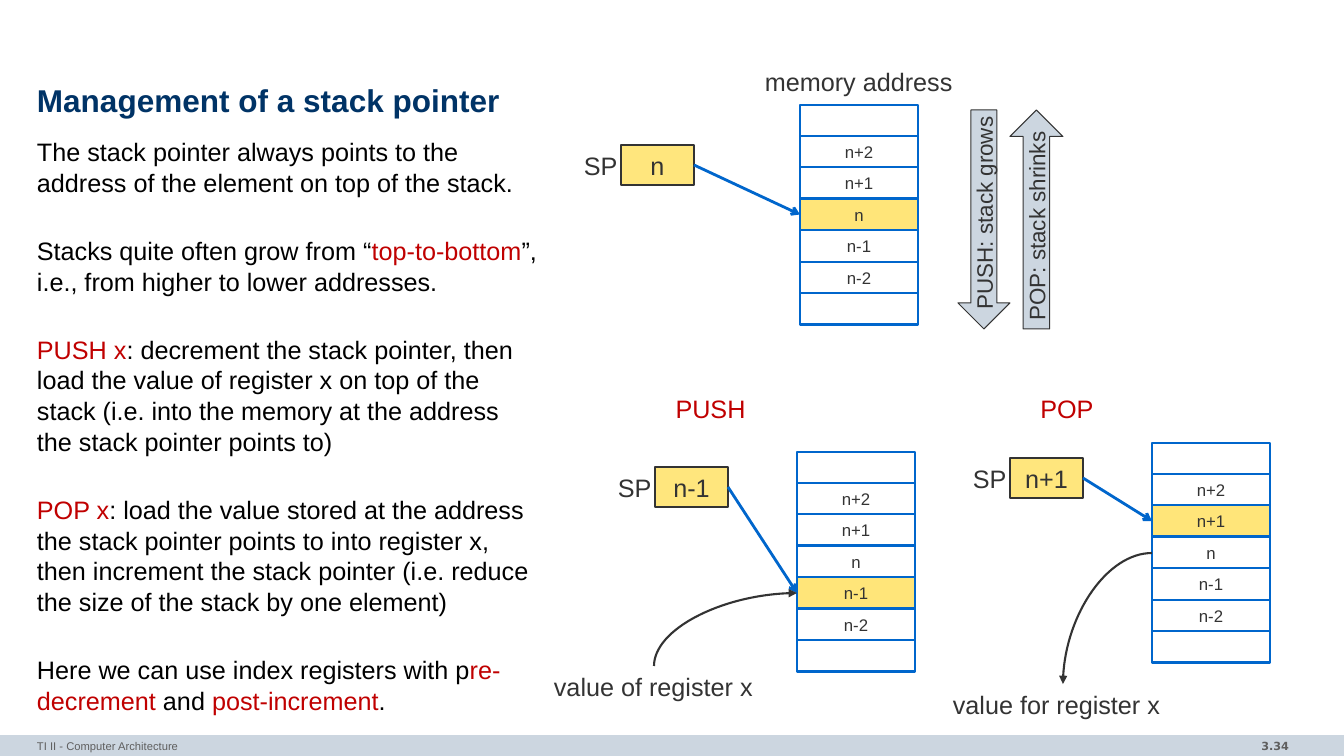
"""Build the slide on managing a stack pointer."""
from lxml import etree
from pptx import Presentation, util as u
from pptx.dml.color import RGBColor
from pptx.enum import shapes, text
from pptx.oxml import ns

NAVY, RED, BLACK, DARK, GRAY = "003366", "C00000", "000000", "333333", "5F5F5F"
BLUE, PALE, YELLOW, GOLD = "0066CC", "CCD6E0", "FFE67D", "FFE579"
LEFT, CENTER, RIGHT = text.PP_ALIGN.LEFT, text.PP_ALIGN.CENTER, text.PP_ALIGN.RIGHT
TOP, MIDDLE = text.MSO_ANCHOR.TOP, text.MSO_ANCHOR.MIDDLE
RECTANGLE = shapes.MSO_SHAPE.RECTANGLE

presentation = Presentation()
presentation.slide_width, presentation.slide_height = u.Inches(13.3333), u.Inches(7.5)
slide = presentation.slides.add_slide(presentation.slide_layouts[6])


def px(*lengths):
    """Turn pixels into EMU."""
    return [u.Emu(round(length * 12192000 / 1344)) for length in lengths]


def add_block(box, paragraphs=(), kind=None, fill=None, line=None, weight=1, frame=None,
              layout=None, font=None, color=DARK):
    """Add a text box, or a shape of the given kind, with its text."""
    if kind is None:
        shape = slide.shapes.add_textbox(*px(*box))
    else:
        shape = slide.shapes.add_shape(kind, *px(*box))
        shape.shadow.inherit = False
        if fill:
            shape.fill.solid()
            shape.fill.fore_color.rgb = RGBColor.from_string(fill)
        else:
            shape.fill.background()
        if line:
            shape.line.color.rgb = RGBColor.from_string(line)
            shape.line.width = u.Pt(weight)
        else:
            shape.line.fill.background()
    for name, value in {"word_wrap": False, **(frame or {})}.items():
        setattr(shape.text_frame, name, value)
    for index, runs in enumerate(paragraphs):
        paragraph = shape.text_frame.paragraphs[0] if index == 0 else shape.text_frame.add_paragraph()
        for name, value in (layout or {}).items():
            if index or name != "space_before":
                setattr(paragraph, name, value)
        for words, run_color in runs:
            run = paragraph.add_run()
            run.text = words
            for name, value in {"name": "Arial", "size": u.Pt(18), **(font or {})}.items():
                setattr(run.font, name, value)
            run.font.color.rgb = RGBColor.from_string(run_color or color)
    return shape


FLUSH = {"margin_left": 0, "margin_right": 0}
FLAT = {**FLUSH, "margin_top": 0, "margin_bottom": 0, "word_wrap": True}
CENTERED = {"frame": {"vertical_anchor": MIDDLE}, "layout": {"alignment": CENTER}}

add_block((0, 735, 1344, 21), kind=RECTANGLE, fill=PALE)
add_block((1119, 734, 180, 23), [[("3.34", GRAY)]], layout={"alignment": RIGHT},
          font={"name": "DejaVu Sans", "size": u.Pt(8), "bold": True})
add_block((37, 734, 879, 22), [[("TI II - Computer Architecture", GRAY)]],
          frame={**FLUSH, "word_wrap": True}, font={"size": u.Pt(8)})
add_block((37, 79, 1270, 47), [[("Management of a stack pointer", NAVY)]],
          frame={**FLAT, "vertical_anchor": MIDDLE}, layout={"line_spacing": 0.85},
          font={"size": u.Pt(22.5), "bold": True})

explanation = [
    [("The stack pointer always points to the address of the element on top of the stack.", None)],
    [("Stacks quite often grow from “", None), ("top-to-bottom", RED),
     ("”, i.e., from higher to lower addresses.", None)],
    [("PUSH x", RED), (": decrement the stack pointer, then load the value of register x on top of "
                       "the stack (i.e. into the memory at the address the stack pointer points to)", None)],
    [("POP x", RED), (": load the value stored at the address the stack pointer points to into "
                      "register x, then increment the stack pointer (i.e. reduce the size of the "
                      "stack by one element)", None)],
    [("Here we can use index registers with p", None), ("re-decrement", RED), (" and ", None),
     ("post-increment", RED), (".", None)],
]
add_block((37, 136, 501, 579), explanation, frame=FLAT, color=BLACK,
          layout={"line_spacing": u.Pt(22), "space_before": u.Pt(26.5)})

directions = [
    (958, 52, shapes.MSO_SHAPE.DOWN_ARROW, "PUSH: stack grows"),
    (1010, 53, shapes.MSO_SHAPE.UP_ARROW, "POP: stack shrinks"),
]
for left, width, kind, words in directions:
    arrow = add_block((left, 110, width, 219), [[(words, None)]], kind, PALE, DARK, 0.75,
                      font={"size": u.Pt(16)}, **CENTERED)
    arrow.element.txBody.bodyPr.set("vert", "vert270")

connectors = []
addresses = ["", "n+2", "n+1", "n", "n-1", "n-2", ""]
stacks = [
    (800, 105, "n", 621, 145),
    (797, 452, "n-1", 655, 467),
    (1152, 443, "n+1", 1010, 458),
]
for left, top, pointer, register_left, register_top in stacks:
    register = add_block((register_left, register_top, 73, 40), [[(pointer, None)]],
                         RECTANGLE, YELLOW, DARK, 1, **CENTERED)
    add_block((register_left - 47, register_top, 55, 40), [[("SP", None)]])
    for row, address in enumerate(addresses):
        cell_top, cell_bottom = (top + 220 * edge // 7 for edge in (row, row + 1))
        cell = add_block((left, cell_top, 118, cell_bottom - cell_top),
                         [[(address, None)]] if address else [], RECTANGLE,
                         GOLD if address == pointer else None, BLUE, 2,
                         font={"size": u.Pt(12)}, **CENTERED)
        if address == pointer:
            target = cell
    connector = slide.shapes.add_connector(shapes.MSO_CONNECTOR.STRAIGHT, 0, 0, 0, 0)
    connector.begin_connect(register, 3)
    connector.end_connect(target, 1)
    connectors.append((connector, BLUE, 2, "a:tailEnd", "arrow"))

labels = [
    (755, 61, 210, "memory address", DARK, LEFT),
    (665, 388, 91, "PUSH", RED, CENTER),
    (1030, 388, 74, "POP", RED, CENTER),
    (544, 666, 221, "value of register x", DARK, LEFT),
    (943, 684, 240, "value for register x", DARK, LEFT),
]
for left, top, width, words, color, alignment in labels:
    add_block((left, top, width, 40), [[(words, color)]], layout={"alignment": alignment})

transfers = [((797, 593, 654, 666), "a:headEnd"), ((1152, 553, 1063, 684), "a:tailEnd")]
for ends, arrow_end in transfers:
    curve = slide.shapes.add_connector(shapes.MSO_CONNECTOR.CURVE, *px(*ends))
    curve.element.spPr.find(ns.qn("a:prstGeom")).set("prst", "curvedConnector2")
    connectors.append((curve, DARK, 1.5, arrow_end, "triangle"))

for connector, color, weight, arrow_end, arrow_type in connectors:
    connector.line.color.rgb = RGBColor.from_string(color)
    connector.line.width = u.Pt(weight)
    etree.SubElement(connector.line._get_or_add_ln(), ns.qn(arrow_end), type=arrow_type)
    etree.SubElement(connector.element.spPr, ns.qn("a:effectLst"))

presentation.save("out.pptx")
